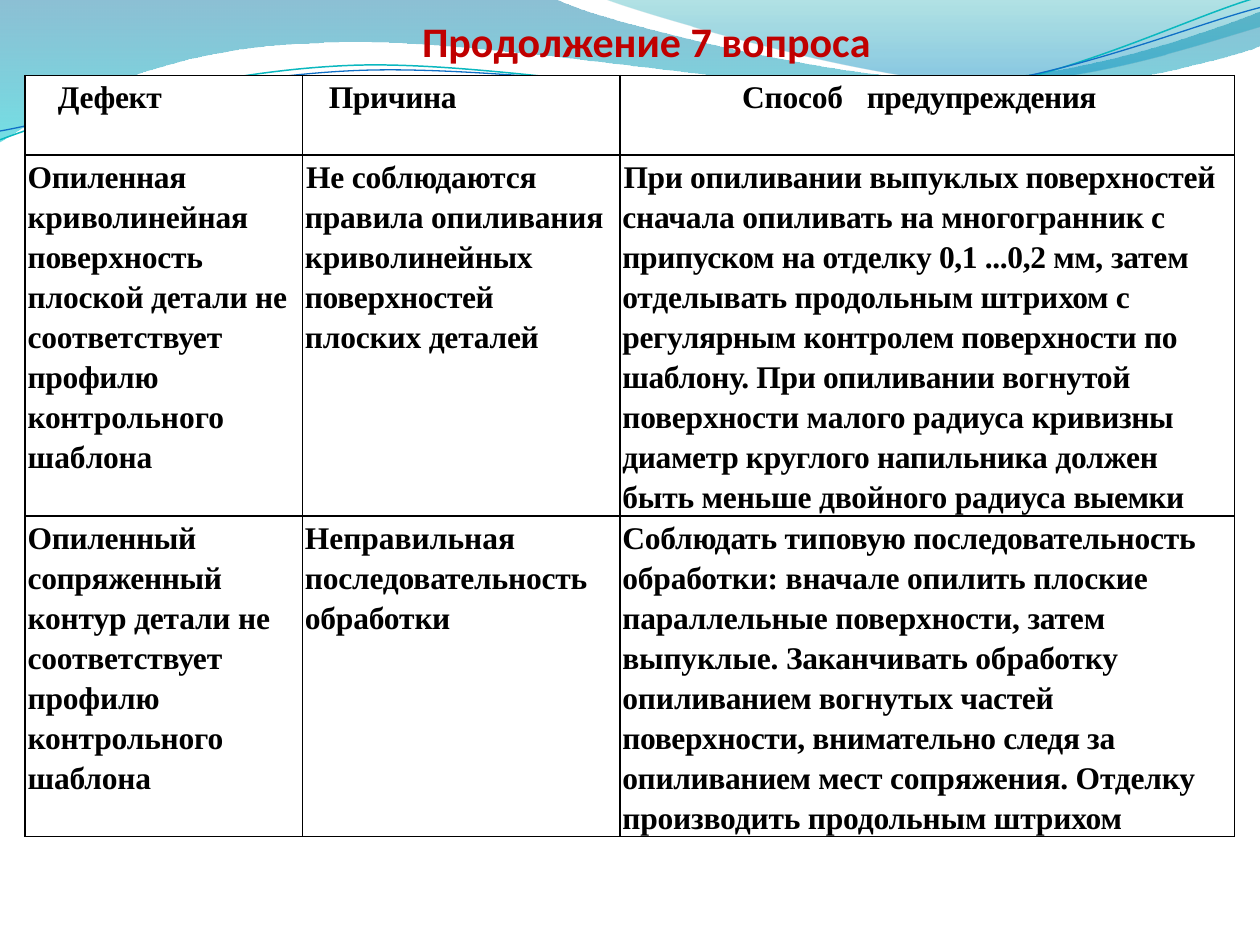
from lxml.etree import SubElement as Sub
from pptx import Presentation
from pptx.dml.color import RGBColor
from pptx.enum.text import MSO_ANCHOR, PP_ALIGN
from pptx.oxml.ns import qn
from pptx.util import Inches, Pt

TITLE = "Продолжение 7 вопроса"
COLS = [2.2, 2.52, 4.88]
ROWS = [0.63, 2.65, 2.46]
INDENTS = [
    [(0.24, 0), (0.19, 0), (0.71, 0.24)],
    [(0, 0), (0, 0.01), (0, 0.01)],
    [(0, 0), (0, 0), (0, 0)],
]
CELLS = [
    [
        [("Дефект", -20)],
        [("Причина", -20)],
        [("Способ", -10), (" ", 900), ("предупреждения", -30)],
    ],
    [
        [("Опиленная кри", -20),
         ("волинейная поверхность плоской детали не соответствует ", -10),
         ("профилю конт", -20), ("рольного шаб", 0), ("лона", -10)],
        [("Не соблюдаются правила опиливания криво", -10),
         ("линейных поверхностей ", -20), ("плоских дета", -10),
         ("лей", -20)],
        [("При опиливании выпуклых поверхно", -20),
         ("стей сначала опиливать на многогран", -10),
         ("ник с припуском на отделку 0,1 ...0,2 мм, ", -20),
         ("затем отделывать продольным штри", -10),
         ("хом с регулярным контролем поверхности по шаблону. "
          "При опиливании во", -20),
         ("гнутой поверхности малого радиуса ", -10),
         ("кривизны диаметр круглого напильника ", -20),
         ("должен быть меньше двойного радиуса ", -10), ("выемки", -30)],
    ],
    [
        [("Опиленный сопряженный ", -20),
         ("контур детали не соответствует профилю контрольного "
          "шаблона", -10)],
        [("Неправильная ", 0), ("последовательность обработ", -10),
         ("ки", -40)],
        [("Соблюдать типовую последовательность обработки: вначале "
          "опилить плоские параллельные поверхности, затем выпуклые. "
          "Заканчивать обработку опи", -10),
         ("ливанием вогнутых частей поверхности, внимательно следя за "
          "опиливанием мест ", -20),
         ("сопряжения. Отделку производить продольным штрихом", -10)],
    ],
]

BANDS = [
    ([(0, 0), (4.4, -0.01), (4.76, 0.17, 6.64, 0.63, 7.58, 0.63),
      (8.53, 0.63, 9.58, 0.26, 10, 0.09), (10.01, 0.36),
      (9.83, 0.44, 8.7, 0.76, 7.46, 0.75),
      (6.22, 0.75, 3.82, 0.28, 2.57, 0.34),
      (1.29, 0.36, 0.46, 0.83, -0.01, 1.13), (0, 0)],
     [(0, "0074A1", 45), (1, "00C6CF", 55)]),
    ([(4.79, -0.01), (5.09, 0.11, 6.82, 0.62, 7.69, 0.65),
      (8.56, 0.69, 9.61, 0.32, 10, 0.21), (10, 0), (4.79, -0.01)],
     [(0, "00A1A9", 30), (0.8, "008BBF", 45)]),
]
WAVES = [
    ([(0, 1.11), (0.48, 0.93, 1.58, 0.57, 2.77, 0.52),
      (3.95, 0.47, 5.93, 0.89, 7.13, 0.8),
      (8.33, 0.71, 9.38, 0.15, 9.98, -0.02)], "0AB8BF", 0.85),
    ([(0, 1.04), (0.47, 0.96, 1.64, 0.61, 2.83, 0.56),
      (4.03, 0.51, 5.97, 0.84, 7.17, 0.75),
      (8.36, 0.67, 9.41, 0.21, 10, 0.06)], "0F6FC6", 0.75),
]


def rgb(code):
    return RGBColor.from_string(code)


def draw(slide, segs, close):
    pts = [(Inches(seg[i]), Inches(seg[i + 1]))
           for seg in segs for i in range(0, len(seg), 2)]
    pen = slide.shapes.build_freeform(*pts[0])
    pen.add_line_segments(pts[1:], close=close)
    shape = pen.convert_to_shape()
    shape.shadow.inherit = False
    lines = iter(list(shape._element.iter(qn("a:lnTo"))))
    for seg in segs[1:]:
        first = next(lines)
        if len(seg) == 6:
            first.tag
            bend = first.makeelement(qn("a:cubicBezTo"))
            first.addprevious(bend)
            for line in (first, next(lines), next(lines)):
                bend.append(line[0])
                line.getparent().remove(line)
    return shape


def add_band(slide, segs, stops):
    shape = draw(slide, segs, True)
    shape.line.fill.background()
    shape.fill.gradient()
    shape.fill.gradient_angle = 270
    for stop, (pos, code, _) in zip(shape.fill.gradient_stops, stops):
        stop.position = pos
        stop.color.rgb = rgb(code)
    tones = shape._element.spPr.iter(qn("a:srgbClr"))
    for tone, (_, _, alpha) in zip(tones, stops):
        Sub(tone, qn("a:alpha"), val=str(alpha * 1000))


def add_wave(slide, segs, code, width):
    shape = draw(slide, segs, False)
    shape.fill.background()
    shape.line.color.rgb = rgb(code)
    shape.line.width = Pt(width)


def set_title(slide):
    title = slide.shapes.title
    slide.shapes._spTree.append(title._element)
    title.left, title.top = Inches(0.63), Inches(0.21)
    title.width, title.height = Inches(9), Inches(0.31)
    frame = title.text_frame
    frame.text = TITLE
    frame.vertical_anchor = MSO_ANCHOR.BOTTOM
    frame.margin_left = frame.margin_right = frame.margin_bottom = 0
    para = frame.paragraphs[0]
    para.alignment = PP_ALIGN.CENTER
    font = para.font
    font.name, font.size, font.bold = "Calibri", Pt(24), True
    font.color.rgb = rgb("C00000")


def set_cell(cell, runs, left, first):
    props = cell._tc.get_or_add_tcPr()
    for side in ("lnL", "lnR", "lnT", "lnB"):
        edge = Sub(props, qn("a:" + side), w=str(Pt(1)))
        Sub(Sub(edge, qn("a:solidFill")), qn("a:srgbClr"), val="000000")
    cell.fill.solid()
    cell.fill.fore_color.rgb = rgb("FFFFFF")
    cell.margin_left = cell.margin_right = Inches(0.02)
    cell.margin_top = cell.margin_bottom = 0
    para = cell.text_frame.paragraphs[0]
    para.line_spacing = 1.15
    style = para._p.get_or_add_pPr()
    style.set("marL", str(Inches(left)))
    style.set("indent", str(Inches(first)))
    font = para.font
    font.name, font.size, font.bold = "Times New Roman", Pt(18), True
    font.color.rgb = rgb("000000")
    for text, gap in runs:
        run = para.add_run()
        run.text = text
        run._r.get_or_add_rPr().set("spc", str(gap))


def add_grid(slide):
    table = slide.shapes.add_table(
        len(ROWS), len(COLS), Inches(0.2), Inches(0.6),
        Inches(sum(COLS)), Inches(sum(ROWS))).table
    table.first_row = table.horz_banding = False
    for col, width in zip(table.columns, COLS):
        col.width = Inches(width)
    for r, (row, height) in enumerate(zip(table.rows, ROWS)):
        row.height = Inches(height)
        for c, runs in enumerate(CELLS[r]):
            set_cell(table.cell(r, c), runs, *INDENTS[r][c])


def main():
    deck = Presentation()
    deck.slide_width, deck.slide_height = Inches(10), Inches(7.5)
    slide = deck.slides.add_slide(deck.slide_layouts[5])
    for band in BANDS:
        add_band(slide, *band)
    for wave in WAVES:
        add_wave(slide, *wave)
    set_title(slide)
    add_grid(slide)
    deck.save("out.pptx")


if __name__ == "__main__":
    main()
